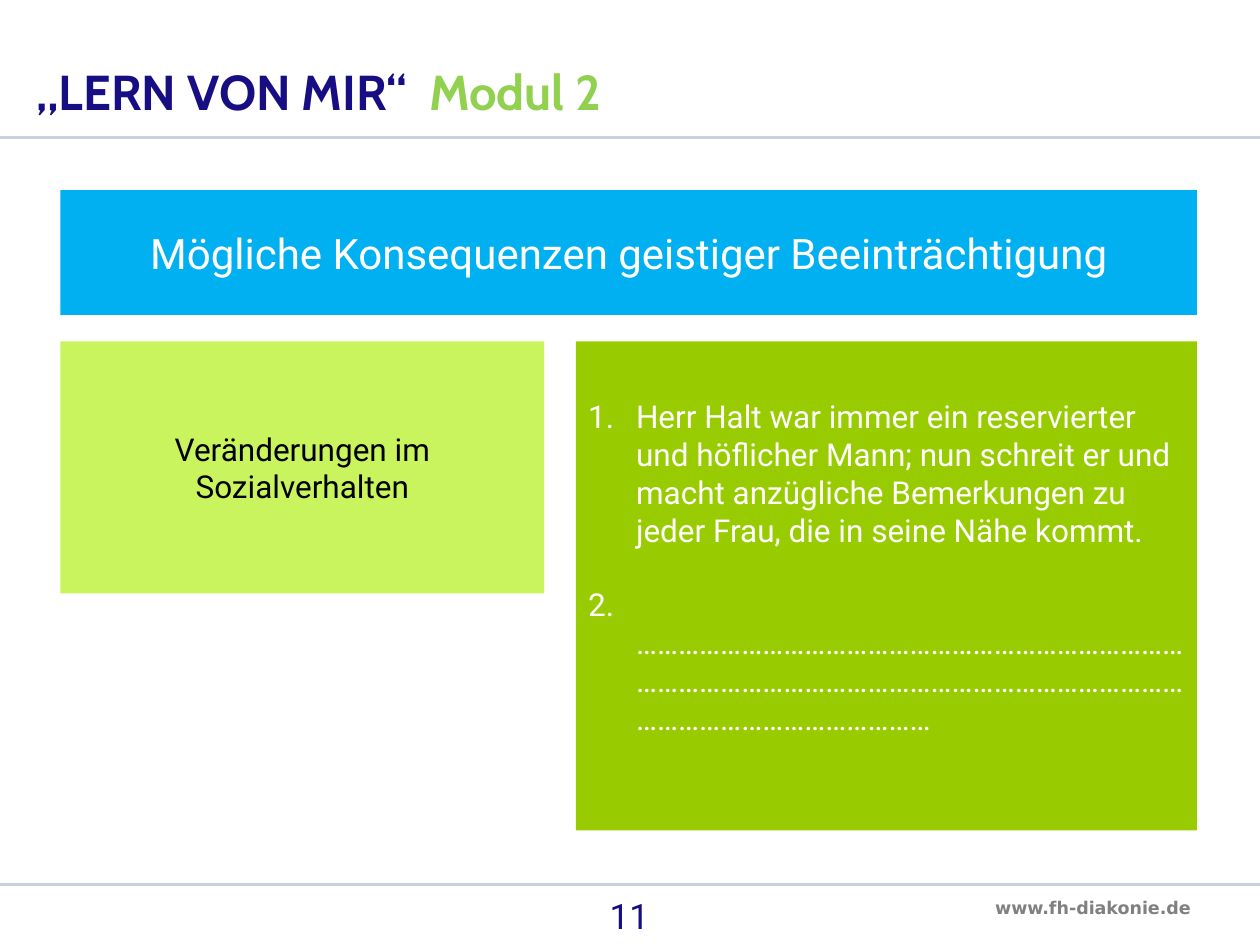
import pptx
import pptx.util
import pptx.dml.color
import pptx.enum.shapes
import pptx.enum.text
import pptx.oxml.ns
from lxml import etree

Inches = pptx.util.Inches
Pt = pptx.util.Pt
Align = pptx.enum.text.PP_ALIGN
Anchor = pptx.enum.text.MSO_ANCHOR
qn = pptx.oxml.ns.qn

NAVY, WHITE = "170E83", "FFFFFF"
LEFT, RIGHT = 0.48, 9.5


def color(code):
    return pptx.dml.color.RGBColor.from_string(code)


def style(font, size, code, name="Roboto", bold=False):
    font.size = Pt(size)
    font.name = name
    font.bold = bold
    font.color.rgb = color(code)


def add_rule(slide, top):
    line = slide.shapes.add_connector(
        pptx.enum.shapes.MSO_CONNECTOR.STRAIGHT,
        Inches(0), Inches(top), Inches(10), Inches(top))
    line.line.color.rgb = color("C8D2DC")
    line.line.width = Pt(1.5)
    etree.SubElement(line._element.spPr, qn("a:effectLst"))


def add_text(slide, box, text, wrap=True):
    frame = slide.shapes.add_textbox(*map(Inches, box)).text_frame
    frame.word_wrap = wrap
    frame.text = text
    return frame


def add_panel(slide, box, fill):
    shape = slide.shapes.add_shape(
        pptx.enum.shapes.MSO_SHAPE.RECTANGLE, *map(Inches, box))
    shape.shadow.inherit = False
    shape.fill.solid()
    shape.fill.fore_color.rgb = color(fill)
    shape.line.fill.background()
    frame = shape.text_frame
    frame.word_wrap = True
    frame.vertical_anchor = Anchor.MIDDLE
    return frame


def add_label(slide, box, fill, text, size, code):
    frame = add_panel(slide, box, fill)
    frame.text = text
    para = frame.paragraphs[0]
    para.alignment = Align.CENTER
    style(para.runs[0].font, size, code)


def add_list(slide, box, fill, items):
    frame = add_panel(slide, box, fill)
    frame.margin_bottom = Inches(0.35)
    frame.text = "\n".join(items)
    for i, para in enumerate(frame.paragraphs):
        para.alignment = Align.LEFT
        if i:
            para.space_before = Pt(21)
        props = para._p.get_or_add_pPr()
        props.set("marL", str(Inches(0.38)))
        props.set("indent", str(-Inches(0.38)))
        font = etree.SubElement(props, qn("a:buFont"))
        font.set("typeface", "+mj-lt")
        number = etree.SubElement(props, qn("a:buAutoNum"))
        number.set("type", "arabicPeriod")
        style(para.runs[0].font, 18, WHITE)


def add_title(slide):
    frame = add_text(slide, (0.19, 0.43, 6.67, 0.58), "„LERN VON MIR“  ")
    frame.vertical_anchor = Anchor.BOTTOM
    para = frame.paragraphs[0]
    para.line_spacing = 0.9
    para.add_run().text = "Modul 2"
    for run, code in zip(para.runs, (NAVY, "92D050")):
        style(run.font, 28, code, "Cabin", True)


def add_footer(slide):
    frame = add_text(slide, (7.8, 7.07, 1.78, 0.27), "www.fh-diakonie.de", False)
    style(frame.paragraphs[0].runs[0].font, 10, "808080", "DejaVu Sans", True)
    frame = add_text(slide, (3.83, 7.05, 2.33, 0.45), "11")
    frame.paragraphs[0].alignment = Align.CENTER
    style(frame.paragraphs[0].runs[0].font, 20, NAVY)


def main():
    deck = pptx.Presentation()
    deck.slide_width, deck.slide_height = Inches(10), Inches(7.5)
    slide = deck.slides.add_slide(deck.slide_layouts[6])

    # Frame of the page
    for top in (1.09, 7.02):
        add_rule(slide, top)
    add_title(slide)
    add_footer(slide)

    # Topic, area and examples
    add_label(slide, (LEFT, 1.51, RIGHT - LEFT, 0.99), "00B0F0",
              "Mögliche Konsequenzen geistiger Beeinträchtigung", 24, WHITE)
    add_label(slide, (LEFT, 2.71, 3.84, 2), "C9F45E",
              "Veränderungen im Sozialverhalten", 18, "000000")
    add_list(slide, (4.57, 2.71, RIGHT - 4.57, 3.88), "99CC00", (
        "Herr Halt war immer ein reservierter und höflicher Mann; nun schreit "
        "er und macht anzügliche Bemerkungen zu jeder Frau, die in seine Nähe "
        "kommt.",
        " " + "…" * 66))

    deck.save("out.pptx")


if __name__ == "__main__":
    main()
